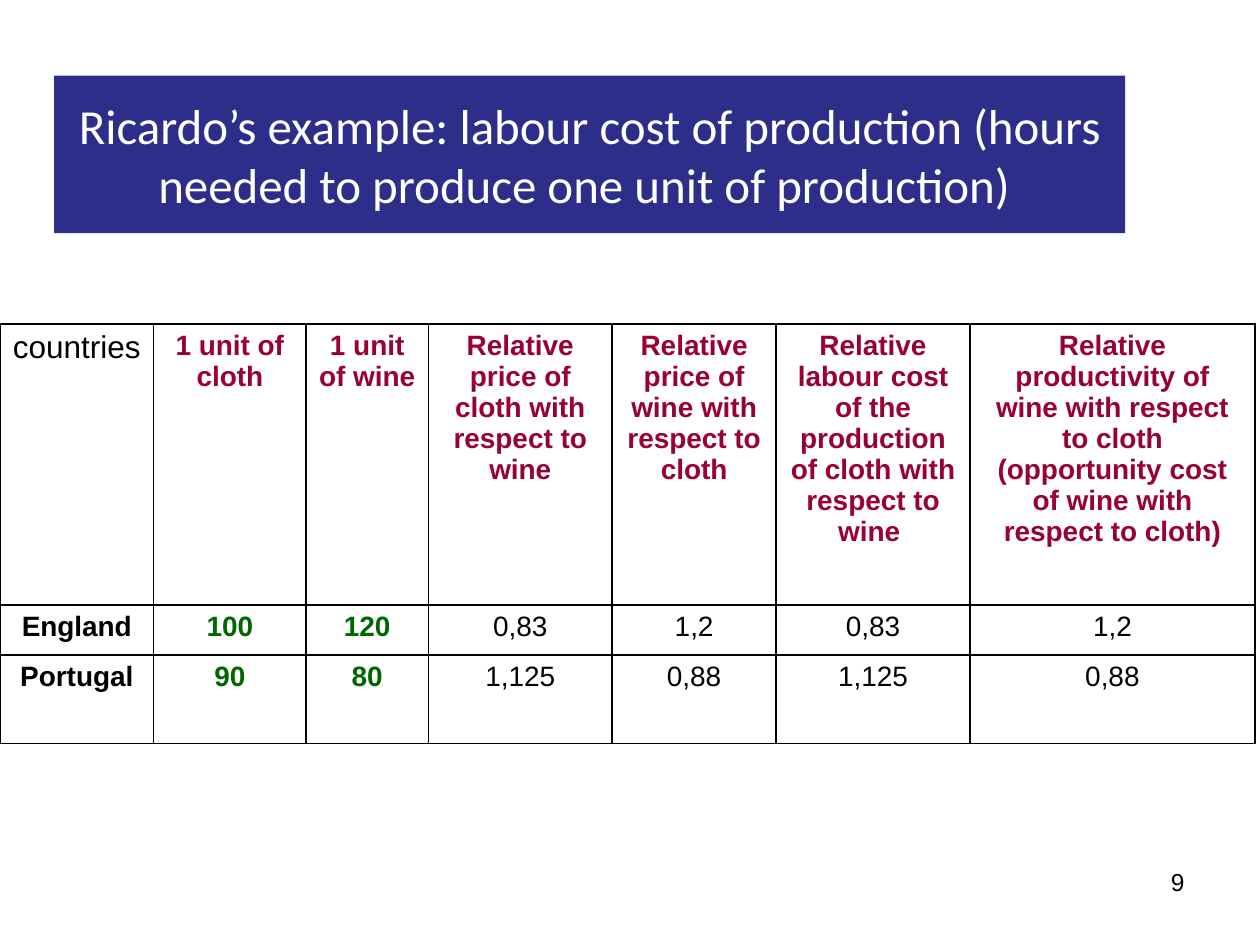
from lxml import etree
from pptx import Presentation
from pptx.dml.color import RGBColor
from pptx.enum.shapes import MSO_SHAPE
from pptx.enum.text import MSO_ANCHOR, PP_ALIGN
from pptx.oxml import parse_xml
from pptx.oxml.ns import nsdecls
from pptx.util import Inches, Pt

BLACK, WHITE, NAVY = "000000", "FFFFFF", "2D2D8A"
CRIMSON, GREEN = "990033", "006600"


def write(paragraph, text, size, color, bold=False, font="Arial", align=PP_ALIGN.CENTER):
    paragraph.alignment = align
    run = paragraph.add_run()
    run.text = text
    run.font.name = font
    run.font.size = Pt(size)
    run.font.bold = bold
    run.font.color.rgb = RGBColor.from_string(color)


def add_borders(cell):
    """Draw a 1 pt black line on all four sides of a cell."""
    properties = cell._tc.get_or_add_tcPr()
    for position, side in enumerate(("lnL", "lnR", "lnT", "lnB")):
        properties.insert(position, parse_xml(
            f'<a:{side} {nsdecls("a")} w="12700"><a:solidFill>'
            f'<a:srgbClr val="{BLACK}"/></a:solidFill></a:{side}>'))


prs = Presentation()
prs.slide_width = Inches(10)
prs.slide_height = Inches(7.5)
slide = prs.slides.add_slide(prs.slide_layouts[6])

page_number = slide.shapes.add_textbox(Inches(7.17), Inches(6.83), Inches(2.33), Inches(0.52))
page_number.text_frame.word_wrap = True
write(page_number.text_frame.paragraphs[0], "9", 14, BLACK, align=PP_ALIGN.RIGHT)

title = slide.shapes.add_shape(
    MSO_SHAPE.RECTANGLE, Inches(0.43), Inches(0.6), Inches(8.5), Inches(1.25))
title.shadow.inherit = False
title.fill.solid()
title.fill.fore_color.rgb = RGBColor.from_string(NAVY)
title.line.fill.background()
title.text_frame.word_wrap = True
title.text_frame.vertical_anchor = MSO_ANCHOR.MIDDLE
write(title.text_frame.paragraphs[0],
      "Ricardo’s example: labour cost of production "
      "(hours needed to produce one unit of production) ",
      28, WHITE, font="Calibri")

costs = [
    ["countries", "1 unit of cloth", "1 unit of wine",
     "Relative price of cloth with respect to wine",
     "Relative price of wine with respect to cloth",
     "Relative labour cost of the production of cloth with respect to wine ",
     "Relative productivity of wine with respect to cloth\n"
     "(opportunity cost of wine with respect to cloth)"],
    ["England", "100", "120", "0,83", "1,2", "0,83", "1,2"],
    ["Portugal", "90", "80", "1,125", "0,88", "1,125", "0,88"],
]
column_widths = [1.22, 1.21, 0.97, 1.46, 1.3, 1.54, 2.26]
row_heights = [2.23, 0.4, 0.7]

table = slide.shapes.add_table(
    len(row_heights), len(column_widths), Inches(0), Inches(2.57),
    Inches(sum(column_widths)), Inches(sum(row_heights))).table
table.first_row = False
table.horz_banding = False
for column, width in zip(table.columns, column_widths):
    column.width = Inches(width)
for row, height in zip(table.rows, row_heights):
    row.height = Inches(height)

for r, row_texts in enumerate(costs):
    for c, text in enumerate(row_texts):
        if r == 0:
            size, color, bold = (18, BLACK, False) if c == 0 else (16, CRIMSON, True)
        else:
            size, color, bold = 16, GREEN if c in (1, 2) else BLACK, c < 3
        cell = table.cell(r, c)
        cell.fill.background()
        add_borders(cell)
        for i, line in enumerate(text.split("\n")):
            frame = cell.text_frame
            paragraph = frame.add_paragraph() if i else frame.paragraphs[0]
            write(paragraph, line, size, color, bold)

prs.save("out.pptx")
